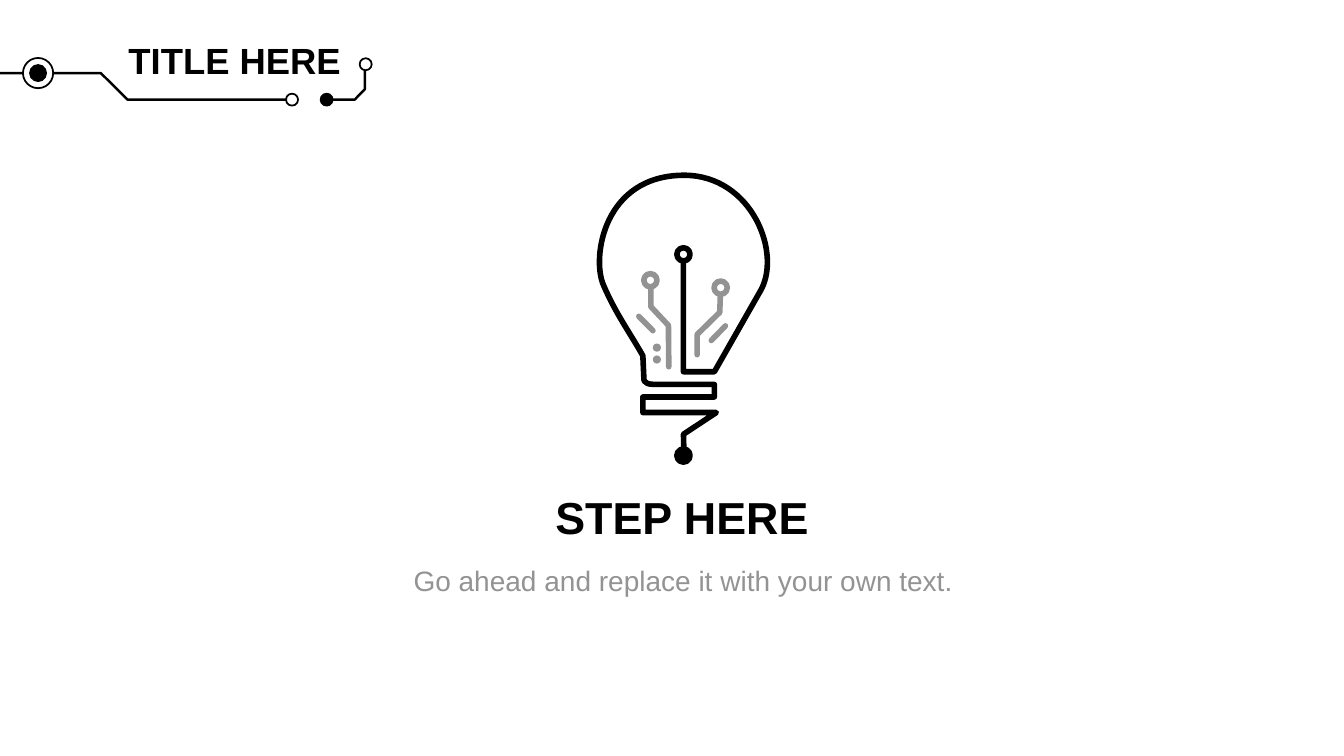
from lxml import etree
from pptx import Presentation
from pptx.dml.color import RGBColor
from pptx.enum.shapes import MSO_CONNECTOR as Connector, MSO_SHAPE as Shape
from pptx.enum.text import MSO_ANCHOR as Anchor, PP_ALIGN as Align
from pptx.oxml.ns import qn
from pptx.util import Pt

BLACK = RGBColor(0x00, 0x00, 0x00)
GREY = RGBColor(0x93, 0x93, 0x93)
WHITE = RGBColor(0xFF, 0xFF, 0xFF)
FONT = "Arial"
CURVE_STEPS = 24


def write_text(holder, text, box, size, color, bold=False):
    holder.left, holder.top, holder.width, holder.height = map(Pt, box)
    frame = holder.text_frame
    frame.word_wrap = True
    frame.vertical_anchor = Anchor.TOP
    frame.text = text
    paragraph = frame.paragraphs[0]
    paragraph.alignment = Align.CENTER
    paragraph.space_before = Pt(0)
    font = paragraph.runs[0].font
    font.name, font.size, font.bold = FONT, Pt(size), bold
    font.color.rgb = color


def style_line(line, color, weight):
    """Give a line its colour and weight, with round ends and corners."""
    line.color.rgb = color
    line.width = Pt(weight)
    ln = line._get_or_add_ln()
    ln.set("cap", "rnd")
    etree.SubElement(ln, qn("a:round"))


def flatten(segments):
    """Turn points (x, y) and cubic curves (x1, y1, x2, y2, x, y) into points."""
    points = []
    for segment in segments:
        if len(segment) == 2:
            points.append(segment)
            continue
        controls = [points[-1], segment[:2], segment[2:4], segment[4:]]
        for step in range(1, CURVE_STEPS + 1):
            t = step / CURVE_STEPS
            weights = ((1 - t) ** 3, 3 * t * (1 - t) ** 2, 3 * t * t * (1 - t), t ** 3)
            points.append(tuple(sum(w * c[axis] for w, c in zip(weights, controls))
                                for axis in (0, 1)))
    return points


def draw_curves(trace, origin, segments):
    """Replace the flattened outline by true lines and cubic curves."""
    outline = trace._element.find(".//" + qn("a:path"))
    for command in list(outline):
        outline.remove(command)
    for index, segment in enumerate(segments):
        tag = "a:moveTo" if index == 0 else "a:lnTo" if len(segment) == 2 else "a:cubicBezTo"
        command = etree.SubElement(outline, qn(tag))
        for x, y in zip(segment[::2], segment[1::2]):
            etree.SubElement(command, qn("a:pt"),
                             x=str(Pt(origin[0] + x) - trace.left),
                             y=str(Pt(origin[1] + y) - trace.top))


def add_trace(slide, origin, segments, color, weight):
    left, top = origin
    points = [(Pt(left + x), Pt(top + y)) for x, y in flatten(segments)]
    builder = slide.shapes.build_freeform(*points[0])
    builder.add_line_segments(points[1:], close=False)
    trace = builder.convert_to_shape()
    draw_curves(trace, origin, segments)
    trace.shadow.inherit = False
    trace.fill.background()
    style_line(trace.line, color, weight)


def add_node(slide, origin, center, diameter, fill, color=None, weight=0):
    left, top = (o + c - diameter / 2 for o, c in zip(origin, center))
    node = slide.shapes.add_shape(Shape.OVAL, Pt(left), Pt(top), Pt(diameter), Pt(diameter))
    node.shadow.inherit = False
    node.fill.solid()
    node.fill.fore_color.rgb = fill
    if color is None:
        node.line.fill.background()
    else:
        style_line(node.line, color, weight)


def add_dash(slide, origin, start, end, color, weight):
    left, top = origin
    dash = slide.shapes.add_connector(
        Connector.STRAIGHT, Pt(left + start[0]), Pt(top + start[1]),
        Pt(left + end[0]), Pt(top + end[1]))
    style_line(dash.line, color, weight)
    etree.SubElement(dash._element.spPr, qn("a:effectLst"))


def add_header(slide, origin):
    left, top = origin
    upper, lower = 28.8, 47.8
    write_text(slide.shapes.title, "TITLE HERE", (left + 79.2, top, 177.1, 38.9),
               26, BLACK, bold=True)
    for trace in (
        [(-1.4, upper), (72, upper), (91.2, lower), (204.5, lower)],
        [(260.6, 24.6), (260.6, 40.4), (253.4, lower), (236.9, lower)],
    ):
        add_trace(slide, origin, trace, BLACK, 1.75)
    for center, diameter, fill in (
        ((27.2, upper), 21.6, WHITE),
        ((27.2, upper), 11.5, BLACK),
        ((208.6, lower), 8.6, WHITE),
        ((233.3, lower), 8.6, BLACK),
        ((261.2, 22.5), 8.6, WHITE),
    ):
        add_node(slide, origin, center, diameter, fill, BLACK, 1.25)


def add_bulb(slide, origin):
    weight = 4
    outline = [
        (60, 197), (60, 204, 60.5, 198, 60, 185), (83.5, 169.5), (31, 169.5),
        (31, 158.4), (82.1, 158.4), (82.1, 149.4), (41.8, 149.4),
        (36, 149.4, 31, 149.4, 31.7, 144), (31, 128.9),
        (21.6, 112.3, 11.5, 98.6, 2.9, 78.5), (-5.8, 59, 2.9, 0, 60.5, 0),
        (109.4, 0, 131, 56.9, 114.5, 83.5), (82.1, 140.4), (60, 140.4), (60, 58),
    ]
    left_circuit = [(49.5, 136.8), (49.5, 127.4, 49.3, 117.4, 49.3, 107.3),
                    (36.7, 93.9), (36.7, 81.4)]
    right_circuit = [(69.8, 128.2), (69.8, 113.8), (86, 97.9),
                     (86, 94.3, 86.3, 90.7, 86.3, 87.1)]
    for trace, color in ((outline, BLACK), (left_circuit, GREY), (right_circuit, GREY)):
        add_trace(slide, origin, trace, color, weight)
    for center, fill, color in (
        ((60, 56.5), WHITE, BLACK),
        ((86.6, 80.3), WHITE, GREY),
        ((36.4, 75), WHITE, GREY),
        ((60, 200.2), BLACK, BLACK),
    ):
        add_node(slide, origin, center, 9.4, fill, color, weight)
    for start, end in (((79.9, 118), (90, 107.6)), ((38.2, 111), (28.1, 100.8))):
        add_dash(slide, origin, start, end, GREY, weight)
    for y in (123.1, 131.6):
        add_node(slide, origin, (41, y), 5.8, GREY)


def add_step(slide, origin):
    left, top = origin
    heading = slide.shapes.add_textbox(0, 0, 0, 0)
    write_text(heading, "STEP HERE", (left + 82.2, top, 260, 46), 32, BLACK, bold=True)
    write_text(slide.placeholders[1], "Go ahead and replace it with your own text.",
               (left, top + 52.6, 426.2, 31.7), 20, GREY)


def main():
    presentation = Presentation()
    presentation.slide_width, presentation.slide_height = Pt(960), Pt(540)
    slide = presentation.slides.add_slide(presentation.slide_layouts[0])
    add_bulb(slide, (428.2, 125.2))
    add_step(slide, (275, 346.3))
    add_header(slide, (0, 23.4))
    presentation.save("out.pptx")


if __name__ == "__main__":
    main()
